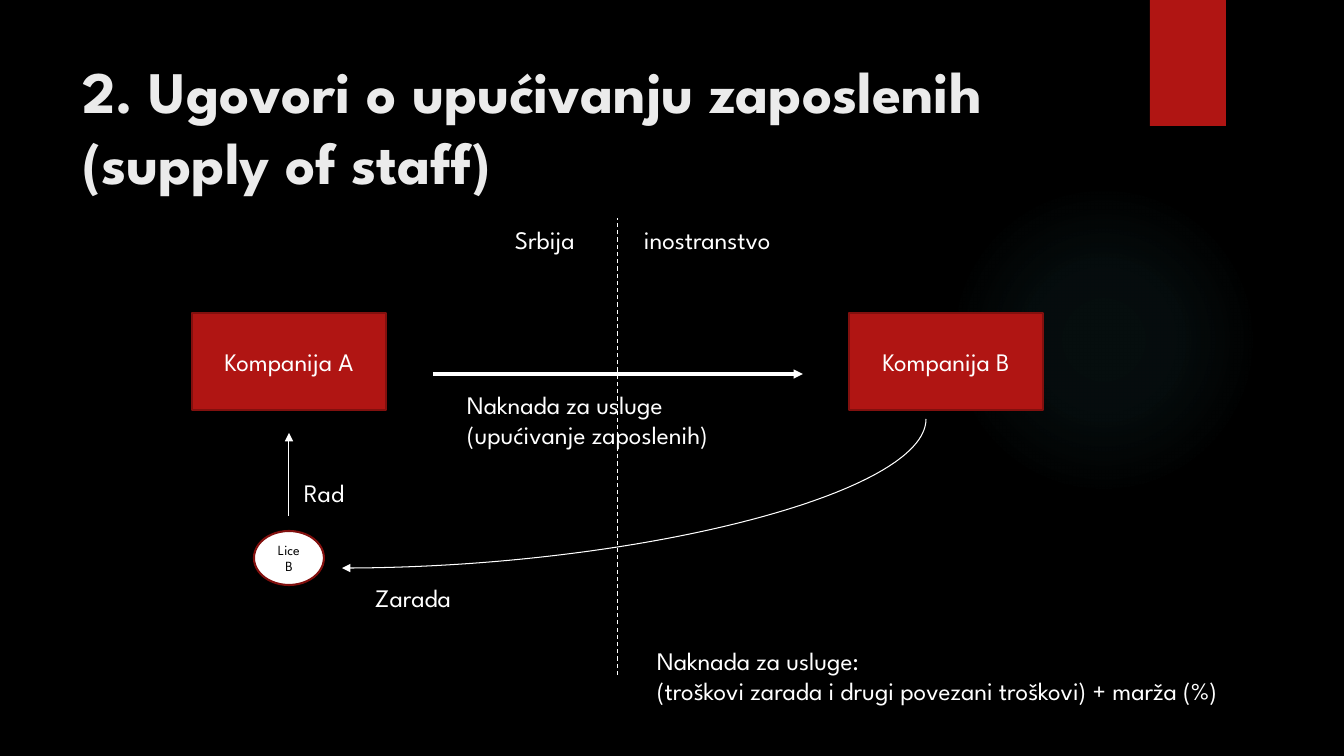
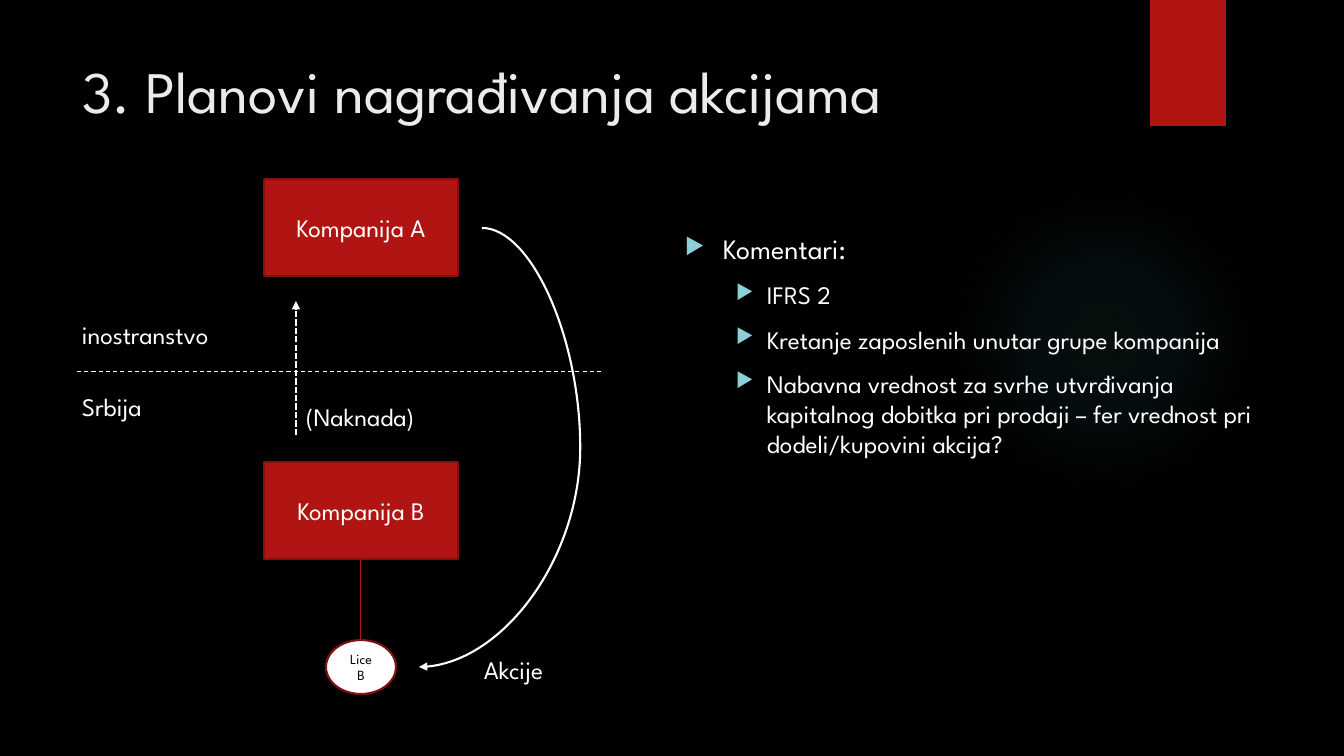
from dataclasses import dataclass

from lxml.etree import SubElement
from pptx import Presentation
from pptx.dml.color import RGBColor
from pptx.enum.dml import MSO_LINE
from pptx.enum.shapes import MSO_CONNECTOR as CONN, MSO_SHAPE as SHAPE
from pptx.enum.text import MSO_ANCHOR as ANCHOR, MSO_AUTO_SIZE as AUTO, PP_ALIGN as ALIGN
from pptx.oxml import parse_xml
from pptx.oxml.ns import nsdecls, qn
from pptx.util import Pt

SLIDE_W, SLIDE_H = 1344, 756
SCALE = 12192000 / SLIDE_W


def px(n):
    return round(n * SCALE)


@dataclass(frozen=True)
class Theme:
    font: str = "League Spartan"
    back: str = "000000"
    red: str = "B01513"
    dark_red: str = "82100E"
    white: str = "FFFFFF"
    black: str = "000000"
    title: str = "EBEBEB"
    glow: str = "50B9C1"
    bullet: str = "8AD0D6"
    title_size: int = 42
    lead_size: int = 20
    text_size: int = 18
    small_size: int = 10


@dataclass(frozen=True)
class Box:
    x: int
    y: int
    w: int
    h: int

    def area(self, dx, dy, w, h):
        return Box(self.x + dx, self.y + dy, w, h)

    def point(self, dx, dy):
        return self.x + dx, self.y + dy

    def emu(self):
        return px(self.x), px(self.y), px(self.w), px(self.h)


T = Theme()
COMPANY = (194, 97)
PERSON = (70, 54)
LINE_H, TWO_LINES_H = 40, 72


def rgb(value):
    return RGBColor.from_string(value)


def style(p, size, color, bold=False):
    f = p.font
    f.name, f.size, f.bold = T.font, Pt(size), bold
    f.color.rgb = rgb(color)


# Building blocks
def add_shape(s, kind, box, fill, line=None):
    sp = s.shapes.add_shape(kind, *box.emu())
    sp.shadow.inherit = False
    sp.fill.solid()
    sp.fill.fore_color.rgb = rgb(fill)
    if line:
        sp.line.color.rgb = rgb(line)
        sp.line.width = Pt(1.5)
    else:
        sp.line.fill.background()
    return sp


def add_node(s, kind, box, text, fill, size, color):
    sp = add_shape(s, kind, box, fill, T.dark_red)
    tf = sp.text_frame
    tf.vertical_anchor = ANCHOR.MIDDLE
    p = tf.paragraphs[0]
    p.text, p.alignment = text, ALIGN.CENTER
    style(p, size, color)
    return sp


def add_company(s, region, dx, dy, name):
    return add_node(s, SHAPE.RECTANGLE, region.area(dx, dy, *COMPANY),
                    name, T.red, T.text_size, T.white)


def add_person(s, region, dx, dy):
    return add_node(s, SHAPE.OVAL, region.area(dx, dy, *PERSON),
                    "Lice B", T.white, T.small_size, T.black)


def add_label(s, box, *lines):
    tf = s.shapes.add_textbox(*box.emu()).text_frame
    tf.word_wrap = True
    for i, line in enumerate(lines):
        p = tf.add_paragraph() if i else tf.paragraphs[0]
        p.text = line
        style(p, T.text_size, T.white)


def add_line(s, start, end, width=0.75, color=T.white, dash=None,
             arrow=False, kind=CONN.STRAIGHT):
    c = s.shapes.add_connector(kind, *map(px, start + end))
    c.line.color.rgb = rgb(color)
    c.line.width = Pt(width)
    if dash:
        c.line.dash_style = dash
    sp_pr = c.element.spPr
    if arrow:
        SubElement(sp_pr.get_or_add_ln(), qn("a:tailEnd"), type="triangle")
    SubElement(sp_pr, qn("a:effectLst"))
    return c


def add_quarter_curve(s, start, end):
    """Arrow that leaves downwards and arrives leftwards: a quarter-turned bend."""
    (x1, y1), (x2, y2) = start, end
    mx, my = (x1 + x2) / 2, (y1 + y2) / 2
    half_w, half_h = abs(y2 - y1) / 2, abs(x2 - x1) / 2
    c = add_line(s, (mx - half_w, my - half_h), (mx + half_w, my + half_h),
                 arrow=True, kind=CONN.CURVE)
    sp_pr = c.element.spPr
    sp_pr.find(qn("a:xfrm")).set("rot", "5400000")
    sp_pr.find(qn("a:prstGeom")).set("prst", "curvedConnector2")


def add_bulge_curve(s, start, end, bend):
    """Arrow whose middle lies at the given share of its width."""
    c = add_line(s, start, end, 1.5, arrow=True, kind=CONN.CURVE)
    geom = c.element.spPr.find(qn("a:prstGeom"))
    av = geom.find(qn("a:avLst"))
    if av is None:
        av = SubElement(geom, qn("a:avLst"))
    SubElement(av, qn("a:gd"), name="adj1", fmla=f"val {round(bend * 100000)}")


def add_bullet(p, left, hang):
    p_pr = p._p.get_or_add_pPr()
    p_pr.set("marL", str(px(left)))
    p_pr.set("indent", str(-px(hang)))
    SubElement(SubElement(p_pr, qn("a:buClr")), qn("a:srgbClr"), val=T.bullet)
    SubElement(p_pr, qn("a:buSzPct"), val="80000")
    SubElement(p_pr, qn("a:buChar"), char="▶")


# Shared frame: glow, ribbon and title
def add_glow(s, box):
    sp = add_shape(s, SHAPE.OVAL, box, T.glow)
    stops = "".join(
        f'<a:gs pos="{pos}000"><a:srgbClr val="{T.glow}">'
        f'<a:alpha val="{alpha}000"/></a:srgbClr></a:gs>'
        for pos, alpha in ((0, 7), (36, 6), (69, 0)))
    grad = parse_xml(
        f'<a:gradFill {nsdecls("a")}><a:gsLst>{stops}</a:gsLst>'
        '<a:path path="circle"><a:fillToRect l="50000" t="50000" r="50000" b="50000"/>'
        '</a:path></a:gradFill>')
    sp_pr = sp.element.spPr
    sp_pr.replace(sp_pr.find(qn("a:solidFill")), grad)


def add_title(s, box, text, bold):
    sp = s.shapes.title
    sp.left, sp.top, sp.width, sp.height = box.emu()
    tf = sp.text_frame
    tf.auto_size, tf.vertical_anchor, tf.word_wrap = AUTO.NONE, ANCHOR.TOP, True
    p = tf.paragraphs[0]
    p.text, p.alignment = text, ALIGN.LEFT
    style(p, T.title_size, T.title, bold)


def new_slide(prs, title, bold=False):
    s = prs.slides.add_slide(prs.slide_layouts.get_by_name("Title Only"))
    add_glow(s, Box(949, 185, 310, 310))
    add_shape(s, SHAPE.RECTANGLE, Box(1150, 0, 76, 126), T.red)
    add_title(s, Box(72, 50, 1037, 154), title, bold)
    return s


# Supply of staff: two companies either side of the border
def supply_diagram(s, b):
    add_company(s, b, 0, 95, "Kompanija A")
    add_company(s, b, 657, 95, "Kompanija B")
    add_person(s, b, 62, 313)

    add_line(s, b.point(426, 457), b.point(426, 0), dash=MSO_LINE.DASH)
    add_line(s, b.point(241, 156), b.point(611, 156), 2.25, arrow=True)
    add_line(s, b.point(97, 298), b.point(97, 215), arrow=True)
    add_quarter_curve(s, b.point(734, 201), b.point(150, 350))

    add_label(s, b.area(313, 1, 102, LINE_H), "Srbija")
    add_label(s, b.area(442, 1, 179, LINE_H), "inostranstvo")
    add_label(s, b.area(265, 166, 314, TWO_LINES_H),
              "Naknada za usluge", "(upućivanje zaposlenih)")
    add_label(s, b.area(102, 254, 102, LINE_H), "Rad")
    add_label(s, b.area(173, 359, 141, LINE_H), "Zarada")
    add_label(s, b.area(455, 422, 682, TWO_LINES_H), "Naknada za usluge:",
              "(troškovi zarada i drugi povezani troškovi) + marža (%)")


# Share awards: parent company above the border, subsidiary below
def award_diagram(s, b):
    add_company(s, b, 192, 0, "Kompanija A")
    subsidiary = add_company(s, b, 192, 283, "Kompanija B")
    person = add_person(s, b, 254, 461)

    add_line(s, b.point(5, 193), b.point(b.w, 193), dash=MSO_LINE.DASH)
    add_line(s, b.point(224, 256), b.point(224, 122), 1.5,
             dash=MSO_LINE.SQUARE_DOT, arrow=True)
    link = add_line(s, b.point(289, 380), b.point(289, 461), color=T.red)
    link.begin_connect(subsidiary, 2)
    link.end_connect(person, 0)
    add_bulge_curve(s, b.point(410, 49), b.point(347, 488), -1.56)

    add_label(s, b.area(0, 135, 179, LINE_H), "inostranstvo")
    add_label(s, b.area(0, 207, 102, LINE_H), "Srbija")
    add_label(s, b.area(224, 217, 184, LINE_H), "(Naknada)")
    add_label(s, b.area(402, 470, 96, LINE_H), "Akcije")


# Comments: a lead line and its points
def comment_list(s, box, lead, points):
    tf = s.shapes.add_textbox(*box.emu()).text_frame
    tf.word_wrap = True
    p = tf.paragraphs[0]
    p.text = lead
    add_bullet(p, 38, 38)
    style(p, T.lead_size, T.white)
    for point in points:
        p = tf.add_paragraph()
        p.text, p.level, p.space_before = point, 1, Pt(10)
        add_bullet(p, 82, 31)
        style(p, T.text_size, T.white)


def main():
    prs = Presentation()
    prs.slide_width, prs.slide_height = px(SLIDE_W), px(SLIDE_H)
    back = prs.slide_master.background.fill
    back.solid()
    back.fore_color.rgb = rgb(T.back)

    s = new_slide(prs, "2. Ugovori o upućivanju zaposlenih (supply of staff)", bold=True)
    supply_diagram(s, Box(192, 218, 1137, 494))

    s = new_slide(prs, "3. Planovi nagrađivanja akcijama")
    award_diagram(s, Box(72, 179, 530, 515))
    comment_list(s, Box(675, 227, 606, 460), "Komentari:", (
        "IFRS 2",
        "Kretanje zaposlenih unutar grupe kompanija",
        "Nabavna vrednost za svrhe utvrđivanja kapitalnog dobitka pri prodaji"
        " – fer vrednost pri dodeli/kupovini akcija?",
    ))
    prs.save("out.pptx")


if __name__ == "__main__":
    main()
